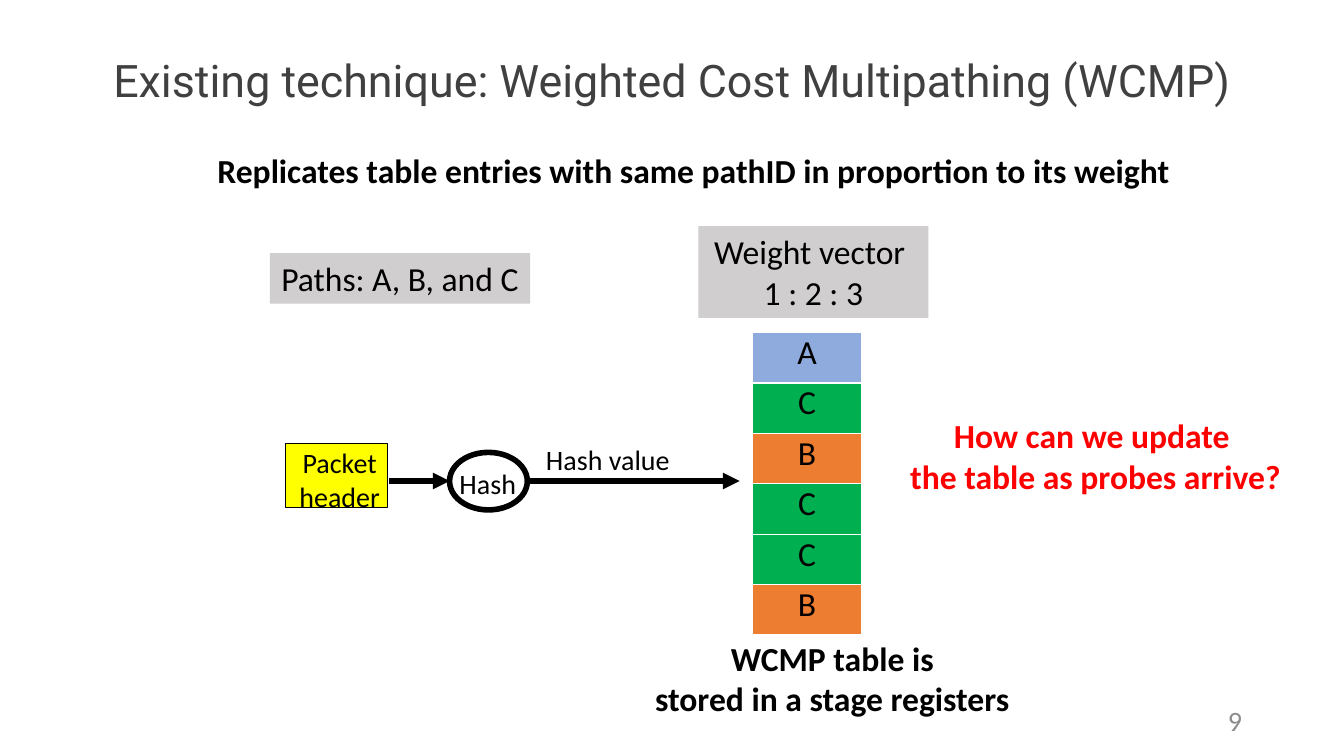
from lxml.etree import SubElement
from pptx import Presentation
from pptx.dml.color import RGBColor
from pptx.enum.shapes import MSO_CONNECTOR as CONNECTOR, MSO_SHAPE as SHAPE
from pptx.enum.text import MSO_ANCHOR as ANCHOR, PP_ALIGN as ALIGN
from pptx.oxml.ns import qn
from pptx.util import Cm, Pt

BLACK = RGBColor(0x00, 0x00, 0x00)
CHARCOAL = RGBColor(0x40, 0x40, 0x40)
GRAY = RGBColor(0x8C, 0x8C, 0x8C)
SILVER = RGBColor(0xD0, 0xCE, 0xCE)
RED = RGBColor(0xFF, 0x00, 0x00)
YELLOW = RGBColor(0xFF, 0xFF, 0x00)
PATH_COLORS = {
    "A": RGBColor(0x8F, 0xAA, 0xDC),
    "B": RGBColor(0xED, 0x7D, 0x31),
    "C": RGBColor(0x00, 0xB0, 0x50),
}


def set_font(paragraph, size, color=BLACK, bold=False, name="Calibri"):
    font = paragraph.font
    font.name, font.size, font.bold = name, Pt(size), bold
    font.color.rgb = color


def write_lines(frame, lines, size=24, color=BLACK, bold=False,
                align=ALIGN.CENTER, wrap=True, anchor=ANCHOR.TOP):
    frame.word_wrap = wrap
    frame.vertical_anchor = anchor
    for index, line in enumerate(lines):
        paragraph = frame.paragraphs[0] if index == 0 else frame.add_paragraph()
        paragraph.text = line
        paragraph.alignment = align
        set_font(paragraph, size, color, bold)


def add_label(slide, box, lines, **style):
    label = slide.shapes.add_textbox(*map(Cm, box))
    write_lines(label.text_frame, lines, **style)


def add_block(slide, kind, box, fill=None, line_width=None):
    block = slide.shapes.add_shape(kind, *map(Cm, box))
    block.shadow.inherit = False
    if fill is None:
        block.fill.background()
    else:
        block.fill.solid()
        block.fill.fore_color.rgb = fill
    if line_width is None:
        block.line.fill.background()
    else:
        block.line.color.rgb = BLACK
        block.line.width = Pt(line_width)
    return block


def add_arrow(slide, start, end, y):
    arrow = slide.shapes.add_connector(
        CONNECTOR.STRAIGHT, Cm(start), Cm(y), Cm(end), Cm(y))
    arrow.line.color.rgb = BLACK
    arrow.line.width = Pt(4)
    SubElement(arrow.line._get_or_add_ln(), qn("a:tailEnd"), type="triangle")
    SubElement(arrow._element.spPr, qn("a:effectLst"))


def draw_title(slide, box):
    title = slide.shapes.title
    title.left, title.top, title.width, title.height = map(Cm, box)
    title.text_frame.text = "Existing technique: Weighted Cost Multipathing (WCMP)"
    title.text_frame.vertical_anchor = ANCHOR.MIDDLE
    heading = title.text_frame.paragraphs[0]
    heading.alignment = ALIGN.CENTER
    heading.line_spacing = 0.9
    set_font(heading, 32, CHARCOAL, name="Roboto")


def draw_tag(slide, box, lines, wrap):
    tag = add_block(slide, SHAPE.RECTANGLE, box, SILVER)
    write_lines(tag.text_frame, lines, wrap=wrap)


def draw_hash_pipeline(slide, box):
    left, top, width, height = box
    axis = top + 1.1
    hash_left, hash_width = left + 4.55, 1.96
    hash_right = hash_left + hash_width
    add_arrow(slide, left + 3.02, hash_left, axis)
    add_block(slide, SHAPE.RECTANGLE, (left + 0.41, top + 0.16, 2.57, 1.6), YELLOW, 0.5)
    add_label(slide, (left, top + 0.08, 3.56, height), ["Packet", "header"], size=20)
    add_block(slide, SHAPE.OVAL, (hash_left, axis - 0.72, hash_width, 1.45), line_width=4)
    add_arrow(slide, hash_right, left + width, axis)
    add_label(slide, (hash_right + 0.22, top, 3.66, 1.12), ["Hash value"],
              size=20, align=ALIGN.LEFT, wrap=False)
    add_label(slide, (hash_left, top + 0.61, hash_width, 1.12), ["Hash"],
              size=20, align=ALIGN.LEFT, wrap=False)


def draw_wcmp_table(slide, box, entries):
    table = slide.shapes.add_table(len(entries), 1, *map(Cm, box)).table
    table.first_row = False
    table.horz_banding = False
    for row, path_id in enumerate(entries):
        cell = table.cell(row, 0)
        cell.margin_left = cell.margin_right = 0
        cell.margin_top = cell.margin_bottom = 0
        cell.fill.solid()
        cell.fill.fore_color.rgb = PATH_COLORS[path_id]
        entry = cell.text_frame.paragraphs[0]
        entry.text = path_id
        entry.alignment = ALIGN.CENTER
        set_font(entry, 24)


def main():
    deck = Presentation()
    deck.slide_width, deck.slide_height = Cm(33.87), Cm(19.05)
    slide = deck.slides.add_slide(deck.slide_layouts[5])

    draw_title(slide, (2.34, 1.02, 29.21, 2.16))
    add_label(slide, (5.23, 3.66, 24.77, 1.27),
              ["Replicates table entries with same pathID in proportion to its weight"],
              bold=True, align=ALIGN.LEFT, wrap=False)
    draw_wcmp_table(slide, (18.97, 8.38, 2.74, 7.62), "ACBCCB")
    draw_tag(slide, (17.6, 5.7, 5.8, 2.31), ["Weight vector ", "1 : 2 : 3"], wrap=False)
    draw_hash_pipeline(slide, (6.78, 11.02, 11.86, 1.96))
    draw_tag(slide, (6.8, 6.38, 6.56, 1.27), ["Paths: A, B, and C"], wrap=False)
    add_label(slide, (16.1, 15.95, 9.75, 2.31),
              ["WCMP table is", "stored in a stage registers"], bold=True)
    add_label(slide, (23.93, 17.65, 7.62, 1.02), ["9"], size=20, color=GRAY,
              align=ALIGN.RIGHT, anchor=ANCHOR.MIDDLE)
    add_label(slide, (22.63, 10.34, 9.96, 2.31),
              ["How can we update ", "the table as probes arrive?"],
              color=RED, bold=True, wrap=False)

    deck.save("out.pptx")


if __name__ == "__main__":
    main()
